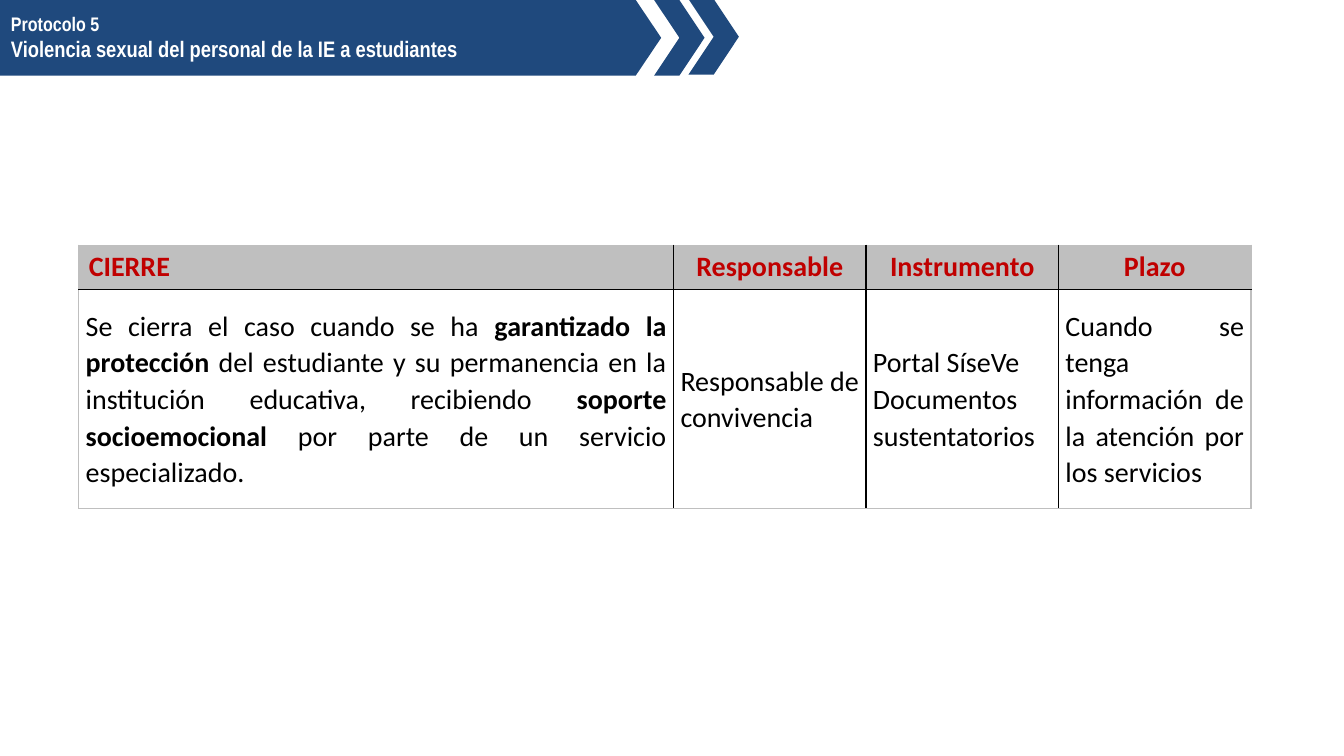
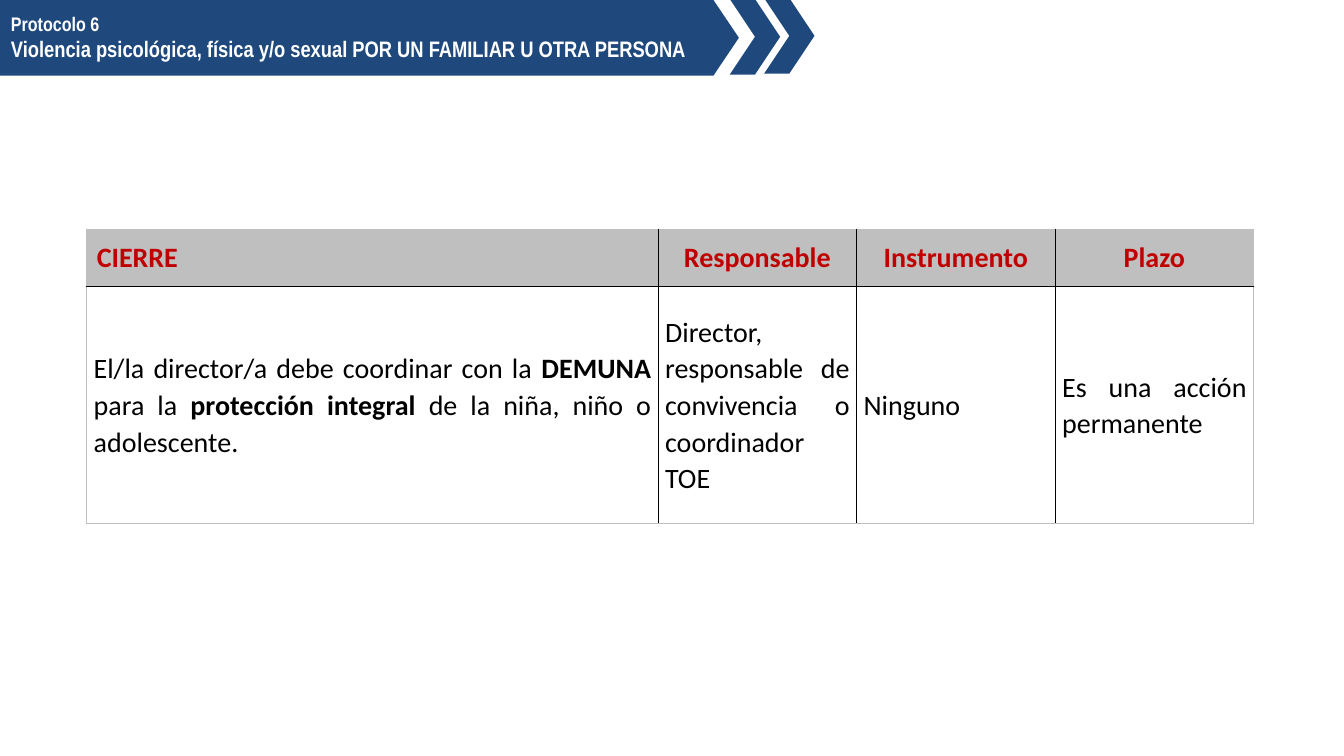
from dataclasses import dataclass

import pptx
import pptx.dml.color
import pptx.enum.shapes
import pptx.enum.text
import pptx.oxml
import pptx.oxml.ns
import pptx.util

Pt = pptx.util.Pt
SHAPES = pptx.enum.shapes.MSO_SHAPE
ALIGN = pptx.enum.text.PP_ALIGN

# Shared style
BLUE, RED, GREY, BLACK, WHITE = "1F497D", "C00000", "BFBFBF", "000000", "FFFFFF"
TITLE_FONT, TABLE_FONT = "Arial Narrow", "Calibri"
BAND_HEIGHT = 54
CHEVRON_WIDTH, CHEVRON_STEP = 36, 24.5
CELL_MARGIN = 5
HEADINGS = ("CIERRE", "Responsable", "Instrumento", "Plazo")


@dataclass
class Protocol:
    number: int
    title: str
    band_width: float
    title_width: float
    chevron_left: float
    chevron_top: float
    table_left: float
    table_top: float
    columns: tuple[float, ...]
    rows: tuple[float, float]
    answers: tuple[tuple[str, ...], ...]  # ** marks bold text


PROTOCOLS = (
    Protocol(
        5, "Violencia sexual del personal de la IE a estudiantes",
        472.3, 447.8, 467.3, 0, 56.2, 175.1,
        (424.9, 137.5, 137.5, 137.5), (31.2, 156.2),
        (("Se cierra el caso cuando se ha **garantizado la protección **del estudiante "
          "y su permanencia en la institución educativa, recibiendo **soporte "
          "socioemocional** por parte de un servicio especializado.",),
         ("Responsable de convivencia",),
         ("Portal SíseVe", "Documentos sustentatorios"),
         ("Cuando se tenga información de la atención por los servicios",)),
    ),
    Protocol(
        6, "Violencia psicológica, física y/o sexual POR UN FAMILIAR U OTRA PERSONA",
        527.8, 519.8, 521.3, -0.7, 61.9, 164.2,
        (408.2, 141.8, 141.8, 141.8), (40.3, 169.2),
        (("El/la director/a debe coordinar con la **DEMUNA** para la **protección "
          "integral **de la niña, niño o adolescente.",),
         ("Director, responsable de convivencia o coordinador TOE",),
         ("Ninguno",),
         ("Es una acción permanente",)),
    ),
)


def color(value: str) -> pptx.dml.color.RGBColor:
    return pptx.dml.color.RGBColor.from_string(value)


def write(paragraph, text: str, *, size: float, font: str, fill: str,
          bold: bool = False, align=ALIGN.LEFT, spacing: float = 1) -> None:
    """Write text; each ** switches bold on or off."""
    paragraph.alignment = align
    paragraph.line_spacing = spacing
    for index, part in enumerate(text.split("**")):
        run = paragraph.add_run()
        run.text = part
        run.font.size = Pt(size)
        run.font.name = font
        run.font.bold = bold != (index % 2 == 1)
        run.font.color.rgb = color(fill)


def add_blue_shape(slide, kind, left: float, top: float, width: float):
    shape = slide.shapes.add_shape(kind, Pt(left), Pt(top), Pt(width), Pt(BAND_HEIGHT))
    shape.shadow.inherit = False
    shape.fill.solid()
    shape.fill.fore_color.rgb = color(BLUE)
    shape.line.fill.background()
    return shape


def set_border(cell, side: str, line_color: str) -> None:
    cell._tc.get_or_add_tcPr().append(pptx.oxml.parse_xml(
        f'<a:ln{side} {pptx.oxml.ns.nsdecls("a")} w="{Pt(1)}">'
        f'<a:solidFill><a:srgbClr val="{line_color}"/></a:solidFill></a:ln{side}>'))


def add_title_band(slide, protocol: Protocol) -> None:
    # Chevrons behind the band
    for index in range(2):
        add_blue_shape(slide, SHAPES.CHEVRON, protocol.chevron_left + index * CHEVRON_STEP,
                       protocol.chevron_top - index * 0.7, CHEVRON_WIDTH)
    band = add_blue_shape(slide, SHAPES.PENTAGON, 0, 0, protocol.band_width)
    band.adjustments[0] = 0.336

    # Title
    box = slide.shapes.add_textbox(Pt(0.7), Pt(5), Pt(protocol.title_width), Pt(44))
    frame = box.text_frame
    frame.word_wrap = True
    style = dict(font=TITLE_FONT, fill=WHITE, bold=True)
    write(frame.paragraphs[0], f"Protocolo {protocol.number}", size=14, **style)
    write(frame.add_paragraph(), protocol.title, size=16, **style)


def add_closing_table(slide, protocol: Protocol) -> None:
    table = slide.shapes.add_table(
        2, len(HEADINGS), Pt(protocol.table_left), Pt(protocol.table_top),
        Pt(sum(protocol.columns)), Pt(sum(protocol.rows))).table
    table.horz_banding = False
    for row, height in zip(table.rows, protocol.rows):
        row.height = Pt(height)
    last = len(HEADINGS) - 1

    for index, (heading, answer) in enumerate(zip(HEADINGS, protocol.answers)):
        table.columns[index].width = Pt(protocol.columns[index])
        header, body = table.cell(0, index), table.cell(1, index)

        # Grey outer frame, black inner lines
        for cell in (header, body):
            cell.vertical_anchor = pptx.enum.text.MSO_ANCHOR.MIDDLE
            set_border(cell, "L", GREY if index == 0 else BLACK)
            set_border(cell, "R", GREY if index == last else BLACK)
            set_border(cell, "T", GREY if cell is header else BLACK)
            set_border(cell, "B", BLACK if cell is header else GREY)

        # Heading
        header.fill.solid()
        header.fill.fore_color.rgb = color(GREY)
        write(header.text_frame.paragraphs[0], heading, size=20, font=TABLE_FONT,
              fill=RED, bold=True, align=ALIGN.LEFT if index == 0 else ALIGN.CENTER)

        # Answer
        body.fill.background()
        body.margin_left = body.margin_right = Pt(CELL_MARGIN)
        body.margin_top = body.margin_bottom = Pt(CELL_MARGIN)
        frame = body.text_frame
        for number, text in enumerate(answer):
            paragraph = frame.add_paragraph() if number else frame.paragraphs[0]
            write(paragraph, text, size=20, font=TABLE_FONT, fill=BLACK,
                  align=ALIGN.JUSTIFY, spacing=1.07)


def main() -> None:
    presentation = pptx.Presentation()
    presentation.slide_width, presentation.slide_height = Pt(960), Pt(540)
    for protocol in PROTOCOLS:
        slide = presentation.slides.add_slide(presentation.slide_layouts[6])
        add_closing_table(slide, protocol)
        add_title_band(slide, protocol)
    presentation.save("out.pptx")


if __name__ == "__main__":
    main()
